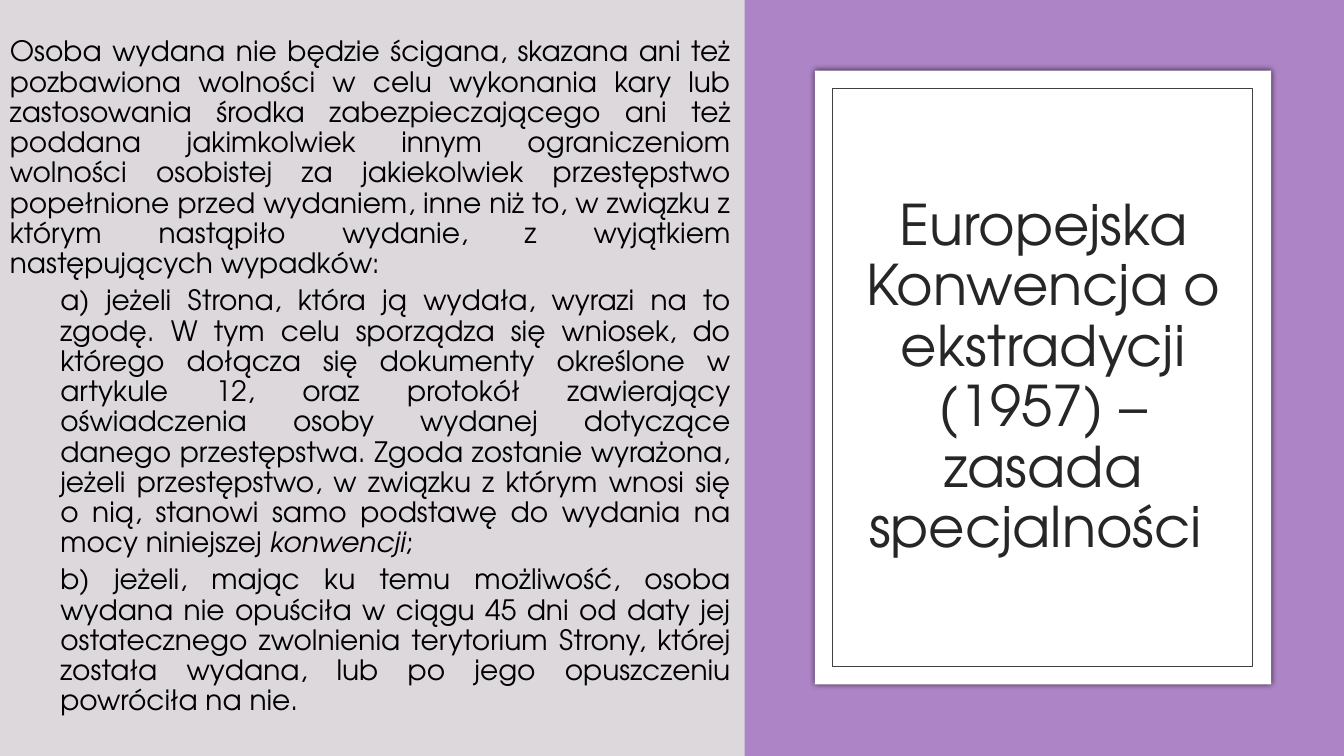
from lxml import etree
from pptx import Presentation
from pptx.dml.color import RGBColor
from pptx.enum.shapes import MSO_SHAPE
from pptx.enum.text import MSO_ANCHOR, PP_ALIGN
from pptx.oxml.ns import qn
from pptx.util import Pt

RECT = MSO_SHAPE.RECTANGLE
MIDDLE = MSO_ANCHOR.MIDDLE
CENTER, JUSTIFY = PP_ALIGN.CENTER, PP_ALIGN.JUSTIFY
FONT = "TeX Gyre Adventor"
PURPLE, GREY, WHITE = "AD84C6", "DCD8DC", "FFFFFF"
BLACK, DARK, EDGE = "000000", "262626", "404040"

# Content: a paragraph is (left indent, space before, runs); a run is (text, italic)
TITLE = [(0, 0, [("Europejska Konwencja o ekstradycji (1957) – zasada specjalności ", False)])]
BODY = [
    (0, 9, [("Osoba wydana nie będzie ścigana, skazana ani też pozbawiona wolności "
             "w celu wykonania kary lub zastosowania środka zabezpieczającego ani też "
             "poddana jakimkolwiek innym ograniczeniom wolności osobistej za "
             "jakiekolwiek przestępstwo popełnione przed wydaniem, inne niż to, "
             "w związku z którym nastąpiło wydanie, z wyjątkiem następujących "
             "wypadków:", False)]),
    (36, 5, [("a) jeżeli Strona, która ją wydała, wyrazi na to zgodę. W tym celu "
              "sporządza się wniosek, do którego dołącza się dokumenty określone "
              "w artykule 12, oraz protokół zawierający oświadczenia osoby wydanej "
              "dotyczące danego przestępstwa. Zgoda zostanie wyrażona, jeżeli "
              "przestępstwo, w związku z którym wnosi się o nią, stanowi samo "
              "podstawę do wydania na mocy niniejszej ", False),
             ("konwencji", True), (";", False)]),
    (36, 5, [("b) jeżeli, mając ku temu możliwość, osoba wydana nie opuściła w ciągu "
              "45 dni od daty jej ostatecznego zwolnienia terytorium Strony, której "
              "została wydana, lub po jego opuszczeniu powróciła na nie.", False)]),
]

# Layout in points: left, top, width, height
WIDE, HIGH = 960, 540
SPLIT = 532
CARD = (582, 50.4, 326, 438.5)
INSET = 13
FRAME = (CARD[0] + INSET, CARD[1] + INSET, CARD[2] - 2 * INSET, CARD[3] - 2 * INSET)


def color(code):
    return RGBColor.from_string(code)


def add_rect(slide, box, fill, line=None):
    shape = slide.shapes.add_shape(RECT, *map(Pt, box))
    shape.shadow.inherit = False
    shape.fill.solid()
    shape.fill.fore_color.rgb = color(fill)
    if line:
        shape.line.color.rgb = color(line)
        shape.line.width = Pt(0.75)
    else:
        shape.line.fill.background()
    return shape


def add_glow(shape):
    """Soft dark shadow on all sides."""
    effects = shape._element.spPr.find(qn("a:effectLst"))
    shade = etree.SubElement(effects, qn("a:outerShdw"), blurRad=str(Pt(4)),
                             dist="0", dir="0", algn="ctr", rotWithShape="0")
    tone = etree.SubElement(shade, qn("a:srgbClr"), val=BLACK)
    etree.SubElement(tone, qn("a:alpha"), val="66000")


def add_text(slide, box, paras, size, tone, align):
    frame = slide.shapes.add_textbox(*map(Pt, box)).text_frame
    frame.word_wrap = True
    frame.vertical_anchor = MIDDLE
    for i, (indent, before, runs) in enumerate(paras):
        para = frame.add_paragraph() if i else frame.paragraphs[0]
        para.alignment = align
        para.line_spacing = 0.9
        para.space_before = Pt(before)
        para._p.get_or_add_pPr().set("marL", str(Pt(indent)))
        for text, italic in runs:
            run = para.add_run()
            run.text = text
            font = run.font
            font.name, font.size, font.italic = FONT, Pt(size), italic
            font.color.rgb = color(tone)


def main():
    deck = Presentation()
    deck.slide_width, deck.slide_height = Pt(WIDE), Pt(HIGH)
    slide = deck.slides.add_slide(deck.slide_layouts[6])
    back = slide.background.fill
    back.solid()
    back.fore_color.rgb = color(GREY)

    # Panels
    add_rect(slide, (0, 0, WIDE, HIGH), PURPLE)
    add_rect(slide, (0, 0, SPLIT, HIGH), GREY)

    # Title card
    add_glow(add_rect(slide, CARD, WHITE))
    add_rect(slide, FRAME, WHITE, EDGE)
    add_text(slide, (607.7, 93.6, 275, 353.5), TITLE, 40, DARK, CENTER)

    # Body
    add_text(slide, (0, 0, 529, 539), BODY, 20, BLACK, JUSTIFY)
    deck.save("out.pptx")


if __name__ == "__main__":
    main()
